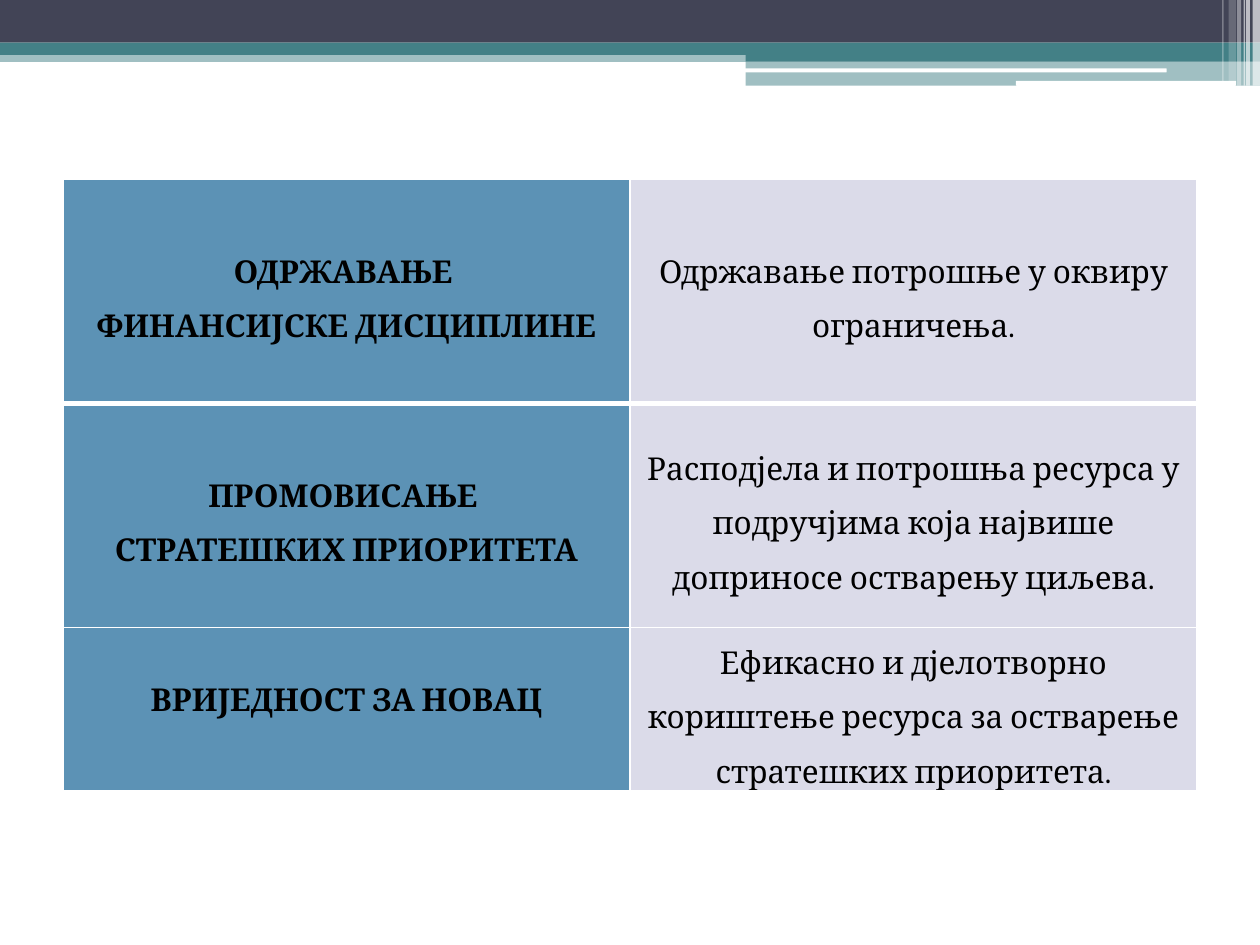
from lxml import etree
from pptx import Presentation
from pptx.dml.color import RGBColor
from pptx.enum.shapes import MSO_SHAPE
from pptx.enum.text import MSO_ANCHOR, PP_ALIGN
from pptx.oxml.ns import qn
from pptx.util import Cm, Pt

RECT = MSO_SHAPE.RECTANGLE
ROUNDED = MSO_SHAPE.ROUNDED_RECTANGLE
CENTER = PP_ALIGN.CENTER
MIDDLE = MSO_ANCHOR.MIDDLE

COLORS = {
    "navy": "424456",
    "teal": "438086",
    "white": "FFFFFF",
    "black": "000000",
    "goal": "5C92B5",
    "meaning": "DBDBE9",
}
FONT = "Cambria"
SLIDE_WIDTH = 25.4

BANDS = [
    (RECT, 0, 1.02, SLIDE_WIDTH, 0.23, "teal", 50),
    (RECT, 0, 0, SLIDE_WIDTH, 0.86, "navy", 100),
    (RECT, 0, 0.86, SLIDE_WIDTH, 0.25, "teal", 100),
    (RECT, 15.03, 0.99, 10.37, 0.25, "teal", 100),
    (RECT, 15.03, 1.24, 10.37, 0.49, "teal", 50),
    (ROUNDED, 15.01, 1.38, 8.51, 0.08, "white", 100),
    (ROUNDED, 20.48, 1.63, 4.44, 0.1, "white", 100),
]
STRIPES = [
    (25.25, 0.15, 1.73, 65),
    (25.12, 0.08, 1.73, 65),
    (25.07, 0.03, 1.73, 60),
    (24.94, 0.08, 1.73, 40),
    (24.77, 0.15, 1.63, 20),
    (24.64, 0.03, 1.63, 30),
]
GOALS = [
    (["ОДРЖАВАЊЕ ", "ФИНАНСИЈСКЕ ДИСЦИПЛИНЕ"], 1.5,
     "Одржавање потрошње у оквиру ограничења."),
    (["ПРОМОВИСАЊЕ ", "СТРАТЕШКИХ ПРИОРИТЕТА"], 1.5,
     "Расподјела и потрошња ресурса у подручјима која највише "
     "доприносе остварењу циљева."),
    (["ВРИЈЕДНОСТ ЗА НОВАЦ"], Pt(12.1),
     "Ефикасно и дјелотворно кориштење ресурса за остварење "
     "стратешких приоритета."),
]
ROW_HEIGHTS = [4.52, 4.52, 3]
COLUMN_WIDTH = 11.43


def rgb(name):
    return RGBColor.from_string(COLORS[name])


def add_band(slide, kind, left, top, width, height, color, opacity):
    band = slide.shapes.add_shape(kind, Cm(left), Cm(top), Cm(width), Cm(height))
    band.shadow.inherit = False
    band.fill.solid()
    band.fill.fore_color.rgb = rgb(color)
    band.line.fill.background()
    if opacity < 100:
        tint = band.fill._xPr.find(qn("a:solidFill"))[0]
        etree.SubElement(tint, qn("a:alpha"), val=str(opacity * 1000))


def add_borders(cell, top, bottom):
    properties = cell._tc.get_or_add_tcPr()
    for side, points in (("L", 1), ("R", 1), ("T", top), ("B", bottom)):
        border = etree.SubElement(properties, qn(f"a:ln{side}"), w=str(Pt(points)))
        fill = etree.SubElement(border, qn("a:solidFill"))
        etree.SubElement(fill, qn("a:srgbClr"), val=COLORS["white"])


def fill_cell(cell, lines, color, bold, spacing):
    cell.fill.solid()
    cell.fill.fore_color.rgb = rgb(color)
    cell.vertical_anchor = MIDDLE
    cell.margin_left = cell.margin_right = Cm(0.18)
    cell.margin_top = cell.margin_bottom = 0
    cell.text_frame.text = "\n".join(lines)
    for paragraph in cell.text_frame.paragraphs:
        paragraph.alignment = CENTER
        paragraph.line_spacing = spacing
        paragraph.font.name = FONT
        paragraph.font.size = Pt(18)
        paragraph.font.bold = bold
        paragraph.font.color.rgb = rgb("black")


def add_goals_table(slide):
    table = slide.shapes.add_table(
        len(GOALS), 2, Cm(1.27), Cm(3.61), Cm(2 * COLUMN_WIDTH), Cm(sum(ROW_HEIGHTS))
    ).table
    for column in table.columns:
        column.width = Cm(COLUMN_WIDTH)
    for index, (goal, spacing, meaning) in enumerate(GOALS):
        table.rows[index].height = Cm(ROW_HEIGHTS[index])
        for cell in table.rows[index].cells:
            add_borders(cell, 3 if index == 1 else 1, 3 if index == 0 else 1)
        fill_cell(table.cell(index, 0), goal, "goal", True, spacing)
        fill_cell(table.cell(index, 1), [meaning], "meaning", False, 1.5)


def main():
    presentation = Presentation()
    presentation.slide_width = Cm(SLIDE_WIDTH)
    presentation.slide_height = Cm(19.05)
    slide = presentation.slides.add_slide(presentation.slide_layouts[6])
    for band in BANDS:
        add_band(slide, *band)
    for left, width, height, opacity in STRIPES:
        add_band(slide, RECT, left, 0, width, height, "white", opacity)
    add_goals_table(slide)
    presentation.save("out.pptx")


if __name__ == "__main__":
    main()
